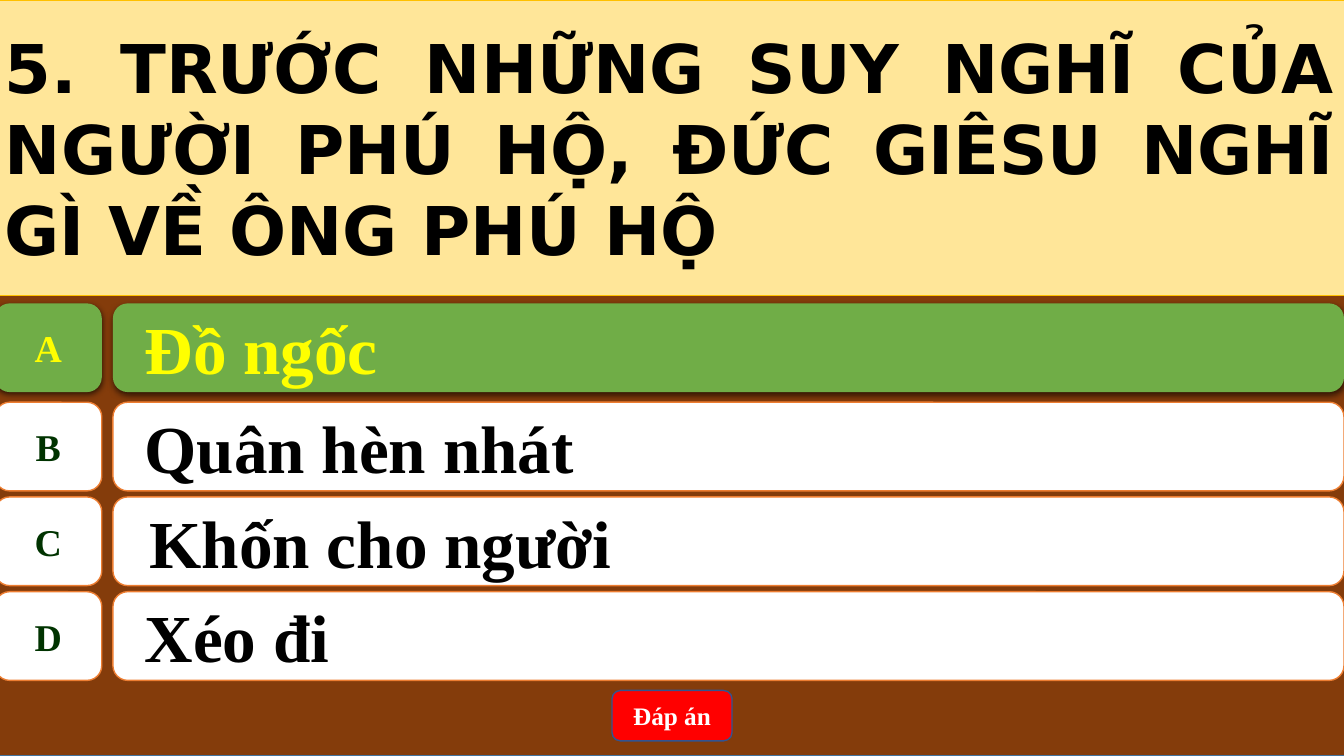
from dataclasses import dataclass
from typing import Optional

import lxml.etree
import pptx
import pptx.dml.color
import pptx.enum.shapes
import pptx.enum.text
import pptx.oxml.ns
import pptx.util

PX = 9144
LEFT = -5
SERIF = "Times New Roman"
SHAPE = pptx.enum.shapes.MSO_SHAPE
ALIGN = pptx.enum.text.PP_ALIGN


@dataclass
class Label:
    text: str
    size: int
    color: str
    font: str = SERIF
    align: ALIGN = ALIGN.LEFT
    inset: int = 10
    wrap: bool = True


@dataclass
class Panel:
    left: int
    top: int
    width: int
    height: int
    fill: str
    kind: SHAPE = SHAPE.RECTANGLE
    line: Optional[str] = None
    weight: float = 1
    label: Optional[Label] = None
    shadow: bool = False


@dataclass
class Answer:
    letter: str
    text: str
    top: int
    inset: int = 27
    correct: bool = False


def rgb(value: str) -> pptx.dml.color.RGBColor:
    return pptx.dml.color.RGBColor.from_string(value)


def apply_format(target: object, values: dict) -> None:
    for name, value in values.items():
        setattr(target, name, value)


def add_shadow(box: pptx.shapes.autoshape.Shape) -> None:
    qn = pptx.oxml.ns.qn
    effects = box._element.spPr.find(qn("a:effectLst"))
    outer = lxml.etree.SubElement(
        effects, qn("a:outerShdw"),
        blurRad="57150", dist="19050", dir="5400000", algn="ctr", rotWithShape="0",
    )
    tint = lxml.etree.SubElement(outer, qn("a:srgbClr"), val="000000")
    lxml.etree.SubElement(tint, qn("a:alpha"), val="63000")


def write_label(box: pptx.shapes.autoshape.Shape, label: Label) -> None:
    frame = box.text_frame
    apply_format(frame, {
        "word_wrap": label.wrap,
        "vertical_anchor": pptx.enum.text.MSO_ANCHOR.MIDDLE,
        "margin_left": label.inset * PX,
    })
    para = frame.paragraphs[0]
    para.alignment = label.align
    span = para.add_run()
    span.text = label.text
    apply_format(span.font, {
        "name": label.font,
        "size": pptx.util.Pt(label.size),
        "bold": True,
    })
    span.font.color.rgb = rgb(label.color)


def draw_panel(page: pptx.slide.Slide, panel: Panel) -> None:
    bounds = (panel.left, panel.top, panel.width, panel.height)
    box = page.shapes.add_shape(panel.kind, *(length * PX for length in bounds))
    box.shadow.inherit = False
    box.fill.solid()
    box.fill.fore_color.rgb = rgb(panel.fill)
    if panel.line:
        box.line.color.rgb = rgb(panel.line)
        box.line.width = pptx.util.Pt(panel.weight)
    else:
        box.line.fill.background()
    if panel.shadow:
        add_shadow(box)
    if panel.label:
        write_label(box, panel.label)


def draw_answer(page: pptx.slide.Slide, answer: Answer) -> None:
    fill, line = ("70AD47", None) if answer.correct else ("FFFFFF", "ED7D31")
    letter_color, text_color = ("FFFF00", "FFFF00") if answer.correct else ("003300", "000000")
    letter = Label(answer.letter, 27, letter_color, align=ALIGN.CENTER, wrap=False)
    text = Label(answer.text, 48, text_color, inset=answer.inset)
    for left, width, kind, label in (
        (112, 1221, SHAPE.ROUNDED_RECTANGLE, text),
        (LEFT, 106, SHAPE.FLOWCHART_ALTERNATE_PROCESS, letter),
    ):
        draw_panel(page, Panel(left, answer.top, width, 88, fill, kind, line,
                               label=label, shadow=answer.correct))


QUESTION = Label(
    "5. TRƯỚC NHỮNG SUY NGHĨ CỦA NGƯỜI PHÚ HỘ, ĐỨC GIÊSU NGHĨ GÌ VỀ ÔNG PHÚ HỘ",
    48, "000000", "DejaVu Sans", ALIGN.JUSTIFY,
)
PANELS = [
    Panel(LEFT, 0, 1339, 750, "843C0B", line="43739E"),
    Panel(LEFT, 0, 1339, 293, "FFE699", line="FFC000", weight=0.5, label=QUESTION),
    Panel(607, 685, 119, 50, "FF0000", SHAPE.ROUNDED_RECTANGLE, "325491",
          label=Label("Đáp án", 18, "FFFFFF", align=ALIGN.CENTER)),
]
ANSWERS = [
    Answer("A", "Đồ ngốc", 301, correct=True),
    Answer("B", "Quân hèn nhát", 399),
    Answer("C", "Khốn cho người", 493, inset=32),
    Answer("D", "Xéo đi", 587),
]


def main() -> None:
    deck = pptx.Presentation()
    apply_format(deck, {"slide_width": 1333 * PX, "slide_height": 750 * PX})
    page = deck.slides.add_slide(deck.slide_layouts[6])
    for panel in PANELS:
        draw_panel(page, panel)
    for answer in ANSWERS:
        draw_answer(page, answer)
    deck.save("out.pptx")


if __name__ == "__main__":
    main()
